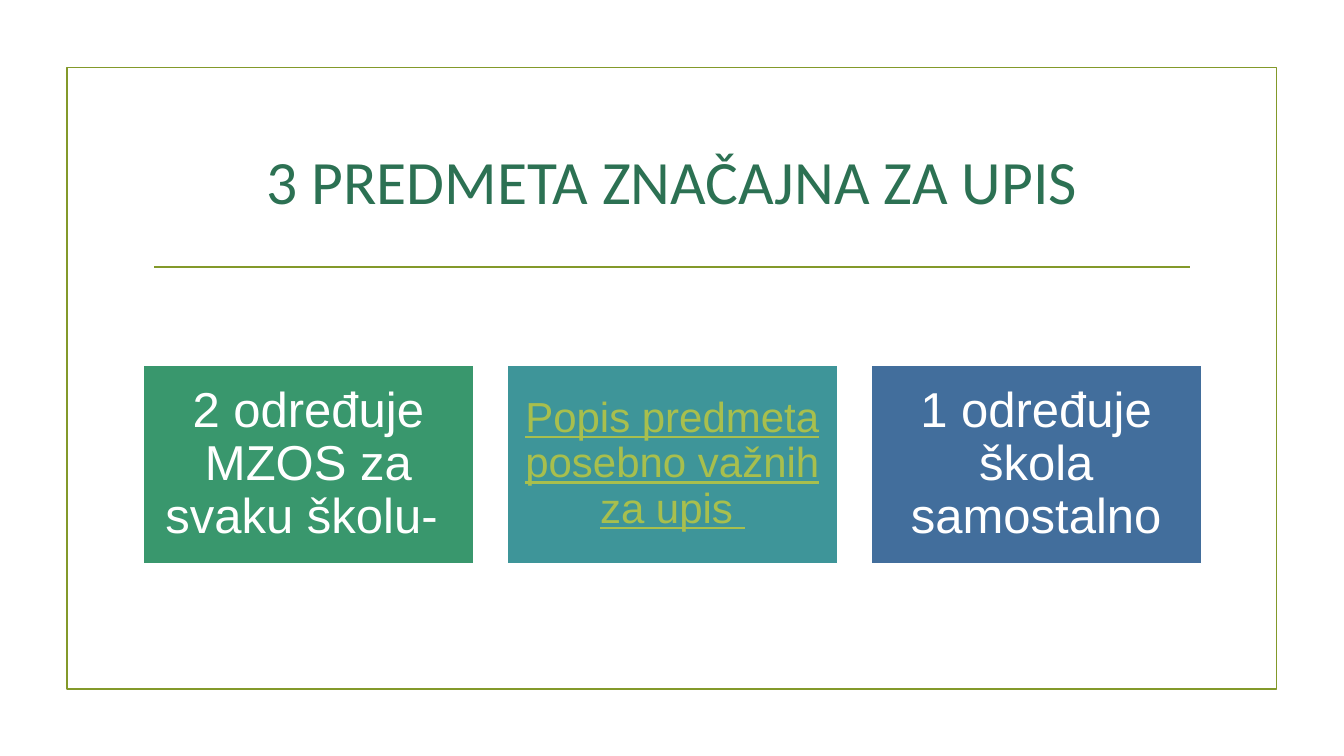
from lxml.etree import SubElement
from pptx import Presentation
from pptx.dml.color import RGBColor
from pptx.enum.shapes import MSO_CONNECTOR as Connector, MSO_SHAPE as Shape
from pptx.enum.text import MSO_ANCHOR as Anchor, PP_ALIGN as Align
from pptx.oxml.ns import qn
from pptx.util import Cm, Pt


def color(hex_value):
    return RGBColor.from_string(hex_value)


class SlideBuilder:
    accent = "83992A"
    white = "FFFFFF"
    line_width = Pt(1.25)

    def __init__(self, slide):
        self.slide = slide

    def outline(self, line, hex_value):
        line.color.rgb = color(hex_value)
        line.width = self.line_width

    def set_text(self, shape, text, size, font_name, hex_value, inset, spacing=1.0, underline=False):
        frame = shape.text_frame
        frame.word_wrap = True
        frame.vertical_anchor = Anchor.MIDDLE
        frame.margin_left = frame.margin_right = Cm(inset[0])
        frame.margin_top = frame.margin_bottom = Cm(inset[1])
        frame.text = text
        paragraph = frame.paragraphs[0]
        paragraph.alignment = Align.CENTER
        paragraph.line_spacing = spacing
        font = paragraph.runs[0].font
        font.name = font_name
        font.size = Pt(size)
        font.color.rgb = color(hex_value)
        font.underline = underline

    def rectangle(self, left, top, width, height, line, fill=None):
        box = self.slide.shapes.add_shape(
            Shape.RECTANGLE, Cm(left), Cm(top), Cm(width), Cm(height))
        box.shadow.inherit = False
        if fill:
            box.fill.solid()
            box.fill.fore_color.rgb = color(fill)
        else:
            box.fill.background()
        self.outline(box.line, line)
        return box

    def frame(self, left, top, width, height):
        self.rectangle(left, top, width, height, self.accent)

    def rule(self, left, right, top):
        divider = self.slide.shapes.add_connector(
            Connector.STRAIGHT, Cm(left), Cm(top), Cm(right), Cm(top))
        self.outline(divider.line, self.accent)
        SubElement(divider._element.spPr, qn("a:effectLst"))

    def title(self, text, left, top, width, height):
        heading = self.slide.shapes.add_textbox(Cm(left), Cm(top), Cm(width), Cm(height))
        self.set_text(heading, text, 44, "Calibri", "2C7153", (0.25, 0.13))

    def card(self, left, top, width, height, fill, text, size, text_color, underline):
        card = self.rectangle(left, top, width, height, self.white, fill)
        self.set_text(card, text, size, "Arial", text_color, (0.38, 0.38), 0.9, underline)


def main():
    presentation = Presentation()
    presentation.slide_width = Cm(33.87)
    presentation.slide_height = Cm(19.05)
    builder = SlideBuilder(presentation.slides.add_slide(presentation.slide_layouts[6]))

    builder.frame(1.69, 1.7, 30.48, 15.67)
    builder.rule(3.89, 30, 6.73)
    builder.title("3 PREDMETA ZNAČAJNA ZA UPIS", 3.61, 2.72, 26.67, 3.63)

    subject_rules = [
        ("39976D", "2 određuje MZOS za svaku školu- ", 35, builder.white, False),
        ("3E9599", "Popis predmeta posebno važnih za upis ", 30, "A8BF4D", True),
        ("426E9C", "1 određuje škola samostalno", 35, builder.white, False),
    ]
    card_width, gap = 8.33, 0.84
    for index, subject_rule in enumerate(subject_rules):
        builder.card(3.61 + index * (card_width + gap), 9.2, card_width, 5, *subject_rule)

    presentation.save("out.pptx")


if __name__ == "__main__":
    main()
